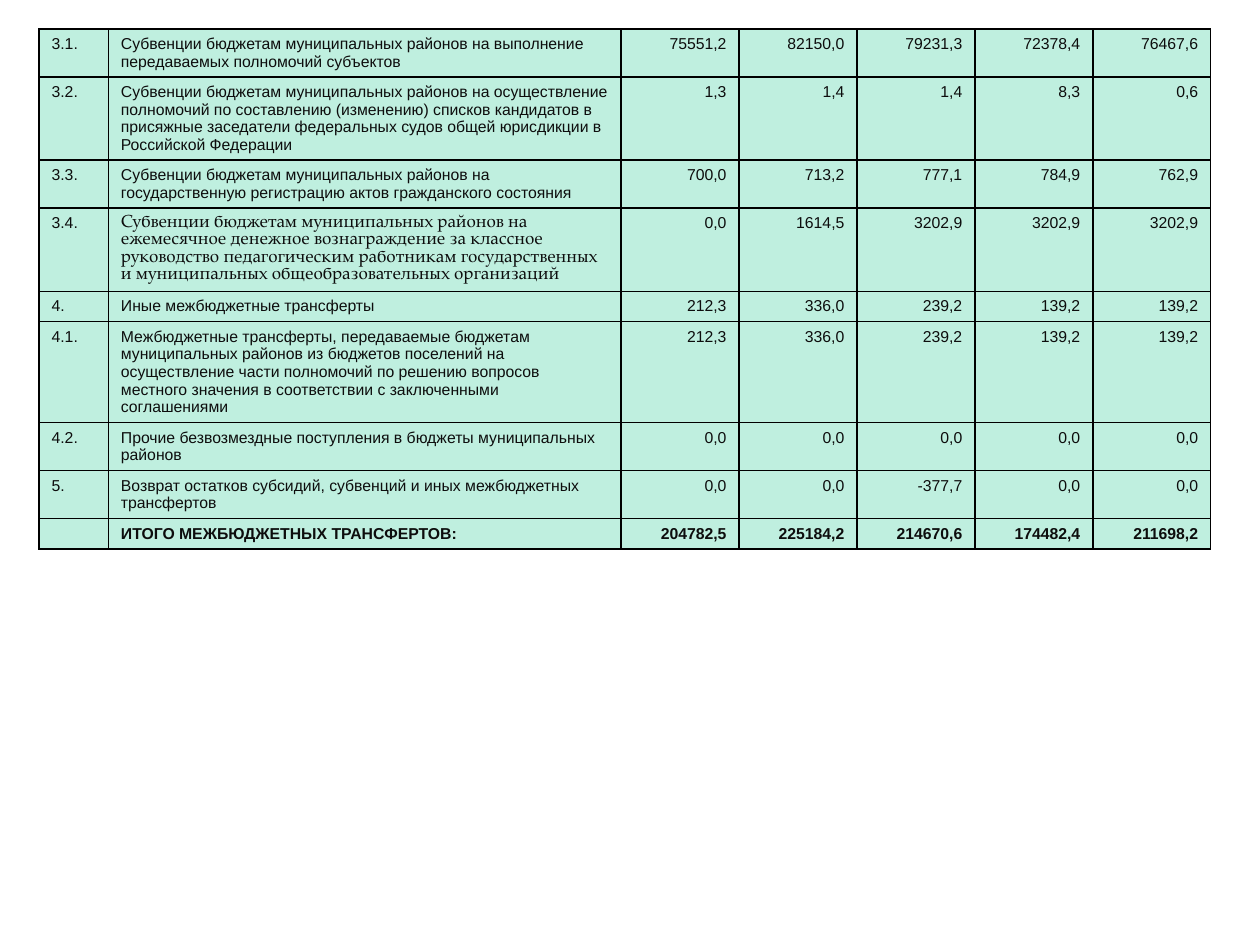
from pptx import Presentation
from pptx import util as u
from pptx.dml.color import RGBColor
from pptx.enum import text
from pptx.oxml import parse_xml
from pptx.oxml.ns import nsdecls

MINT = RGBColor(0xBF, 0xEF, 0xDF)
INK = RGBColor(0x0D, 0x0D, 0x0D)
BORDER = RGBColor(0, 0, 0)

# Table frame and grid, in inches
LEFT, TOP, WIDTH = 0.31, 0.23, 9.3
NUMBER_COL, NAME_COL, YEARS = 0.55, 4.07, 5
YEAR_COL = (WIDTH - NUMBER_COL - NAME_COL) / YEARS
COLUMNS = [NUMBER_COL, NAME_COL] + [YEAR_COL] * YEARS
LINE_HEIGHT, CELL_PADDING = 0.14, 0.1

PLAIN = {"name": "Arial", "size": u.Pt(9), "bold": False}
SERIF = {"name": "TeX Gyre Pagella", "size": u.Pt(10), "bold": False}
TOTAL = {**PLAIN, "bold": True}

# Number, name, yearly amounts, lines of text, format of the name
TRANSFERS = [
    ("3.1.", "Субвенции бюджетам муниципальных районов на выполнение "
     "передаваемых полномочий субъектов",
     "75551,2 82150,0 79231,3 72378,4 76467,6", 2, PLAIN),
    ("3.2.", "Субвенции бюджетам муниципальных районов на осуществление "
     "полномочий по составлению (изменению) списков кандидатов в присяжные "
     "заседатели федеральных судов общей юрисдикции в Российской Федерации",
     "1,3 1,4 1,4 8,3 0,6", 4, PLAIN),
    ("3.3.", "Субвенции бюджетам муниципальных районов на государственную "
     "регистрацию актов гражданского состояния",
     "700,0 713,2 777,1 784,9 762,9", 2, PLAIN),
    ("3.4.", "Субвенции бюджетам муниципальных районов на ежемесячное "
     "денежное вознаграждение за классное руководство педагогическим "
     "работникам государственных и муниципальных общеобразовательных "
     "организаций",
     "0,0 1614,5 3202,9 3202,9 3202,9", 4, SERIF),
    ("4.", "Иные межбюджетные трансферты",
     "212,3 336,0 239,2 139,2 139,2", 1, PLAIN),
    ("4.1.", "Межбюджетные трансферты, передаваемые бюджетам муниципальных "
     "районов из бюджетов поселений на осуществление части полномочий по "
     "решению вопросов местного значения в соответствии с заключенными "
     "соглашениями",
     "212,3 336,0 239,2 139,2 139,2", 5, PLAIN),
    ("4.2.", "Прочие безвозмездные поступления в бюджеты муниципальных районов",
     "0,0 0,0 0,0 0,0 0,0", 2, PLAIN),
    ("5.", "Возврат остатков субсидий, субвенций и иных межбюджетных "
     "трансфертов",
     "0,0 0,0 -377,7 0,0 0,0", 2, PLAIN),
    ("", "ИТОГО МЕЖБЮДЖЕТНЫХ ТРАНСФЕРТОВ:",
     "204782,5 225184,2 214670,6 174482,4 211698,2", 1, TOTAL),
]


def add_borders(cell):
    properties = cell._tc.get_or_add_tcPr()
    for position, side in enumerate(("lnL", "lnR", "lnT", "lnB")):
        properties.insert(position, parse_xml(
            f'<a:{side} {nsdecls("a")} w="{u.Pt(1)}"><a:solidFill>'
            f'<a:srgbClr val="{BORDER}"/></a:solidFill></a:{side}>'))


def fill_cell(cell, wording, style, align):
    cell.fill.solid()
    cell.fill.fore_color.rgb = MINT
    add_borders(cell)
    paragraph = cell.text_frame.paragraphs[0]
    paragraph.alignment = align
    if style is SERIF:
        paragraph.line_spacing = u.Pt(10)
    if wording:
        paragraph.add_run().text = wording
    fonts = [paragraph.font] + [run.font for run in paragraph.runs]
    for font in fonts:
        for attribute, value in style.items():
            setattr(font, attribute, value)
        font.color.rgb = INK


def fill_row(table, index, transfer):
    number, name, amounts, lines, name_style = transfer
    table.rows[index].height = u.Inches(lines * LINE_HEIGHT + CELL_PADDING)
    amount_style = TOTAL if name_style is TOTAL else PLAIN
    cells = table.rows[index].cells
    fill_cell(cells[0], number, PLAIN, text.PP_ALIGN.LEFT)
    fill_cell(cells[1], name, name_style, text.PP_ALIGN.LEFT)
    for column, amount in enumerate(amounts.split(), start=2):
        fill_cell(cells[column], amount, amount_style, text.PP_ALIGN.RIGHT)


def add_transfers_table(slide):
    height = sum(row[3] * LINE_HEIGHT + CELL_PADDING for row in TRANSFERS)
    table = slide.shapes.add_table(
        len(TRANSFERS), len(COLUMNS), u.Inches(LEFT), u.Inches(TOP),
        u.Inches(WIDTH), u.Inches(height)).table
    table.first_row = table.horz_banding = False
    for column, width in zip(table.columns, COLUMNS):
        column.width = u.Inches(width)
    for index, transfer in enumerate(TRANSFERS):
        fill_row(table, index, transfer)


def main():
    deck = Presentation()
    deck.slide_width, deck.slide_height = u.Inches(10), u.Inches(7.5)
    slide = deck.slides.add_slide(deck.slide_layouts[6])
    add_transfers_table(slide)
    deck.save("out.pptx")


if __name__ == "__main__":
    main()
